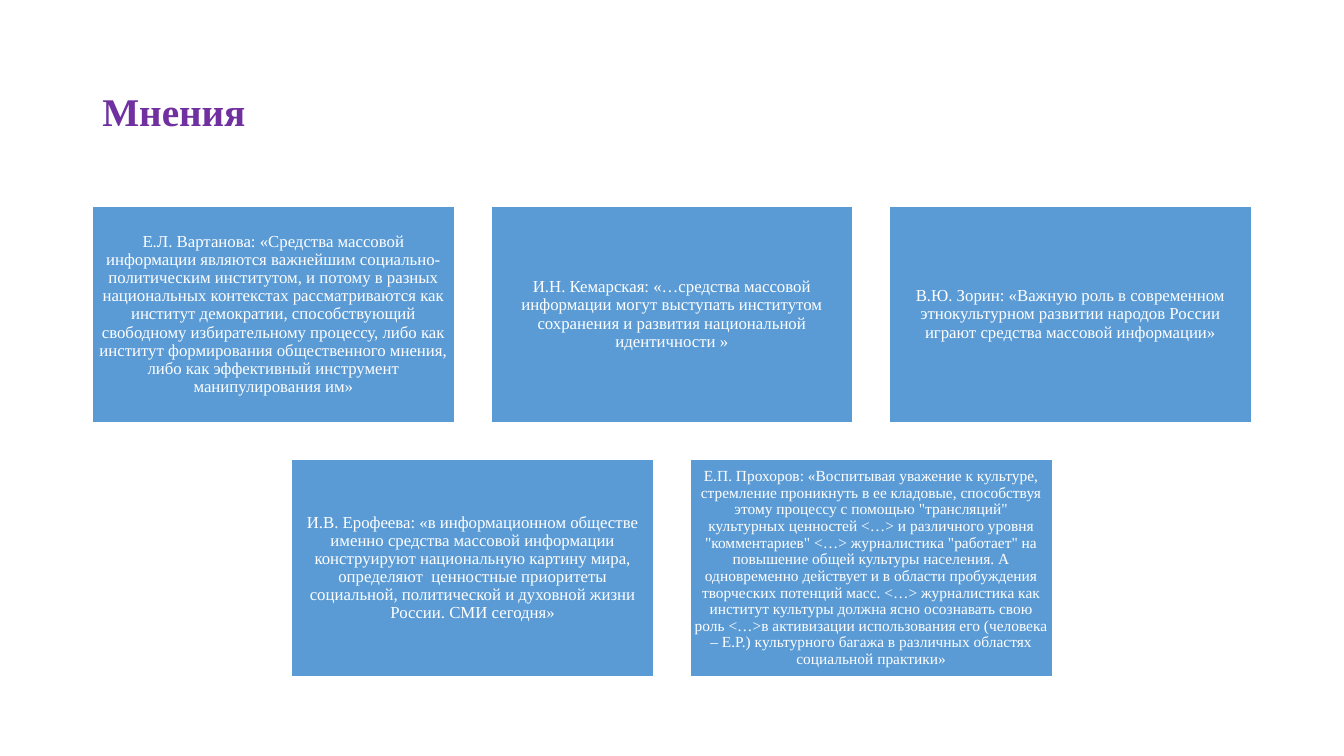
from pptx import Presentation
from pptx.dml.color import RGBColor
from pptx.enum.shapes import MSO_SHAPE
from pptx.enum.text import MSO_ANCHOR, PP_ALIGN
from pptx.util import Pt

RECT = MSO_SHAPE.RECTANGLE
MIDDLE = MSO_ANCHOR.MIDDLE
LEFT, CENTER = PP_ALIGN.LEFT, PP_ALIGN.CENTER
PURPLE = RGBColor(0x70, 0x30, 0xA0)
BLUE = RGBColor(0x5B, 0x9B, 0xD5)
WHITE = RGBColor(0xFF, 0xFF, 0xFF)
FONT = "Times New Roman"
COLUMNS = 3
GAP_RATIO = 0.1
CARD_ASPECT = 0.6

OPINIONS = [
    ("Е.Л. Вартанова: «Средства массовой информации являются важнейшим "
     "социально-политическим институтом, и потому в разных национальных "
     "контекстах рассматриваются как институт демократии, способствующий "
     "свободному избирательному процессу, либо как институт формирования "
     "общественного мнения, либо как эффективный инструмент "
     "манипулирования им»", 12),
    ("И.Н. Кемарская: «…средства массовой информации могут выступать "
     "институтом сохранения и развития национальной идентичности »", 12),
    ("В.Ю. Зорин: «Важную роль в современном этнокультурном развитии "
     "народов России играют средства массовой информации»", 12),
    ("И.В. Ерофеева: «в информационном обществе именно средства массовой "
     "информации конструируют национальную картину мира, определяют  "
     "ценностные приоритеты социальной, политической и духовной жизни "
     "России. СМИ сегодня»", 12),
    ("Е.П. Прохоров: «Воспитывая уважение к культуре, стремление проникнуть "
     "в ее кладовые, способствуя этому процессу с помощью \"трансляций\" "
     "культурных ценностей <…> и различного уровня \"комментариев\" <…> "
     "журналистика \"работает\" на повышение общей культуры населения. А "
     "одновременно действует и в области пробуждения творческих потенций "
     "масс. <…> журналистика как институт культуры должна ясно осознавать "
     "свою роль <…>в активизации использования его (человека – Е.Р.) "
     "культурного багажа в различных областях социальной практики»", 11),
]


def write_text(sp, text, size, color, align, bold=False):
    """Fill a shape with one vertically centred paragraph."""
    tf = sp.text_frame
    tf.word_wrap = True
    tf.vertical_anchor = MIDDLE
    p = tf.paragraphs[0]
    p.text = text
    p.alignment = align
    p.line_spacing = 0.9
    p.font.name = FONT
    p.font.size = Pt(size)
    p.font.bold = bold
    p.font.color.rgb = color


def add_title(s, text, x, y, w, h):
    """Place the slide title in the given box."""
    sp = s.shapes.add_textbox(Pt(x), Pt(y), Pt(w), Pt(h))
    write_text(sp, text, 28, PURPLE, LEFT, bold=True)


def add_card(s, text, size, x, y, w, h):
    """Place one opinion card in the given box."""
    sp = s.shapes.add_shape(RECT, Pt(x), Pt(y), Pt(w), Pt(h))
    sp.shadow.inherit = False
    sp.fill.solid()
    sp.fill.fore_color.rgb = BLUE
    sp.line.color.rgb = WHITE
    sp.line.width = Pt(1)
    write_text(sp, text, size, WHITE, CENTER)
    tf = sp.text_frame
    inset = Pt(0.3 * size)
    tf.margin_left = tf.margin_right = inset
    tf.margin_top = tf.margin_bottom = inset


def add_card_grid(s, opinions, x, y, w):
    """Lay out cards in rows, each row centred in the given width."""
    card_w = w / (COLUMNS + (COLUMNS - 1) * GAP_RATIO)
    card_h = card_w * CARD_ASPECT
    gap = card_w * GAP_RATIO
    for start in range(0, len(opinions), COLUMNS):
        row = opinions[start:start + COLUMNS]
        row_w = len(row) * (card_w + gap) - gap
        left = x + (w - row_w) / 2
        top = y + start // COLUMNS * (card_h + gap)
        for i, (text, size) in enumerate(row):
            add_card(s, text, size, left + i * (card_w + gap), top, card_w, card_h)


def main():
    """Build the opinions slide and save it."""
    prs = Presentation()
    prs.slide_width, prs.slide_height = Pt(960), Pt(540)
    s = prs.slides.add_slide(prs.slide_layouts[6])
    add_title(s, "Мнения", 66, 28.75, 828, 104.4)
    add_card_grid(s, OPINIONS, 66, 147, 828)
    prs.save("out.pptx")


if __name__ == "__main__":
    main()
